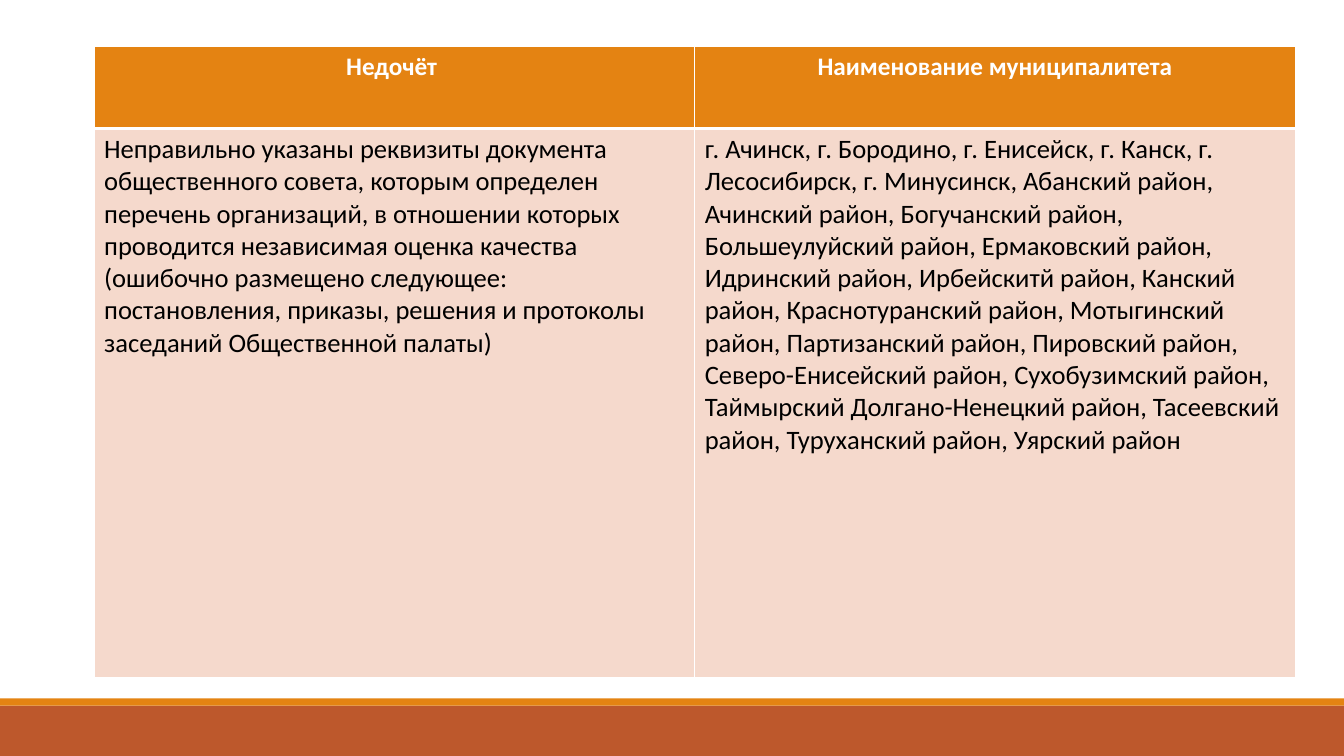
"""Builds a slide with a table of shortcomings and the municipalities concerned."""
from dataclasses import dataclass

from lxml import etree
from pptx import Presentation
from pptx.dml.color import RGBColor
from pptx.enum.shapes import MSO_SHAPE
from pptx.enum.text import PP_ALIGN
from pptx.oxml.ns import qn
from pptx.util import Pt

RECTANGLE = MSO_SHAPE.RECTANGLE
CENTER, LEFT = PP_ALIGN.CENTER, PP_ALIGN.LEFT


@dataclass(frozen=True)
class Theme:
    orange: str = "E48312"
    rust: str = "BD582C"
    blush: str = "F5D9CC"
    white: str = "FFFFFF"
    black: str = "000000"
    font: str = "Calibri"
    header_size: int = 18
    body_size: int = 19


theme = Theme()


def add_border(cell, side, width):
    """Draw one white edge of a table cell."""
    line = etree.SubElement(cell._tc.get_or_add_tcPr(), qn(f"a:ln{side}"), w=str(Pt(width)))
    fill = etree.SubElement(line, qn("a:solidFill"))
    etree.SubElement(fill, qn("a:srgbClr"), val=theme.white)


deck = Presentation()
deck.slide_width, deck.slide_height = Pt(960), Pt(540)
page = deck.slides.add_slide(deck.slide_layouts[6])

for top, height, color in ((504, 36, theme.rust), (498.75, 5.25, theme.orange)):
    band = page.shapes.add_shape(RECTANGLE, 0, Pt(top), deck.slide_width, Pt(height))
    band.shadow.inherit = False
    band.fill.solid()
    band.fill.fore_color.rgb = RGBColor.from_string(color)
    band.line.fill.background()

rows = (
    ("Недочёт ", "Наименование муниципалитета"),
    (
        "Неправильно указаны реквизиты документа общественного совета, которым определен "
        "перечень организаций, в отношении которых проводится независимая оценка качества "
        "(ошибочно размещено следующее: постановления, приказы, решения и протоколы "
        "заседаний Общественной палаты)",
        "г. Ачинск, г. Бородино, г. Енисейск, г. Канск, г. Лесосибирск, г. Минусинск, "
        "Абанский район, Ачинский район, Богучанский район, Большеулуйский район, "
        "Ермаковский район, Идринский район, Ирбейскитй район, Канский район, "
        "Краснотуранский район, Мотыгинский район, Партизанский район, Пировский район, "
        "Северо-Енисейский район, Сухобузимский район, Таймырский Долгано-Ненецкий район, "
        "Тасеевский район, Туруханский район, Уярский район",
    ),
)
row_styles = (
    (58.5, theme.orange, theme.white, theme.header_size, True, CENTER, (1, 1, 1, 3)),
    (392.5, theme.blush, theme.black, theme.body_size, False, LEFT, (1, 1, 3, 1)),
)

table = page.shapes.add_table(2, 2, Pt(67.25), Pt(33.25), Pt(858), Pt(451)).table
for row_index, (texts, style) in enumerate(zip(rows, row_styles)):
    height, fill, ink, size, bold, alignment, borders = style
    table.rows[row_index].height = Pt(height)
    for column_index, text in enumerate(texts):
        cell = table.cell(row_index, column_index)
        for side, width in zip("LRTB", borders):
            add_border(cell, side, width)
        cell.fill.solid()
        cell.fill.fore_color.rgb = RGBColor.from_string(fill)
        para = cell.text_frame.paragraphs[0]
        para.text = text
        para.alignment = alignment
        span = para.runs[0]
        span.font.name = theme.font
        span.font.size = Pt(size)
        span.font.bold = bold
        span.font.color.rgb = RGBColor.from_string(ink)

deck.save("out.pptx")
